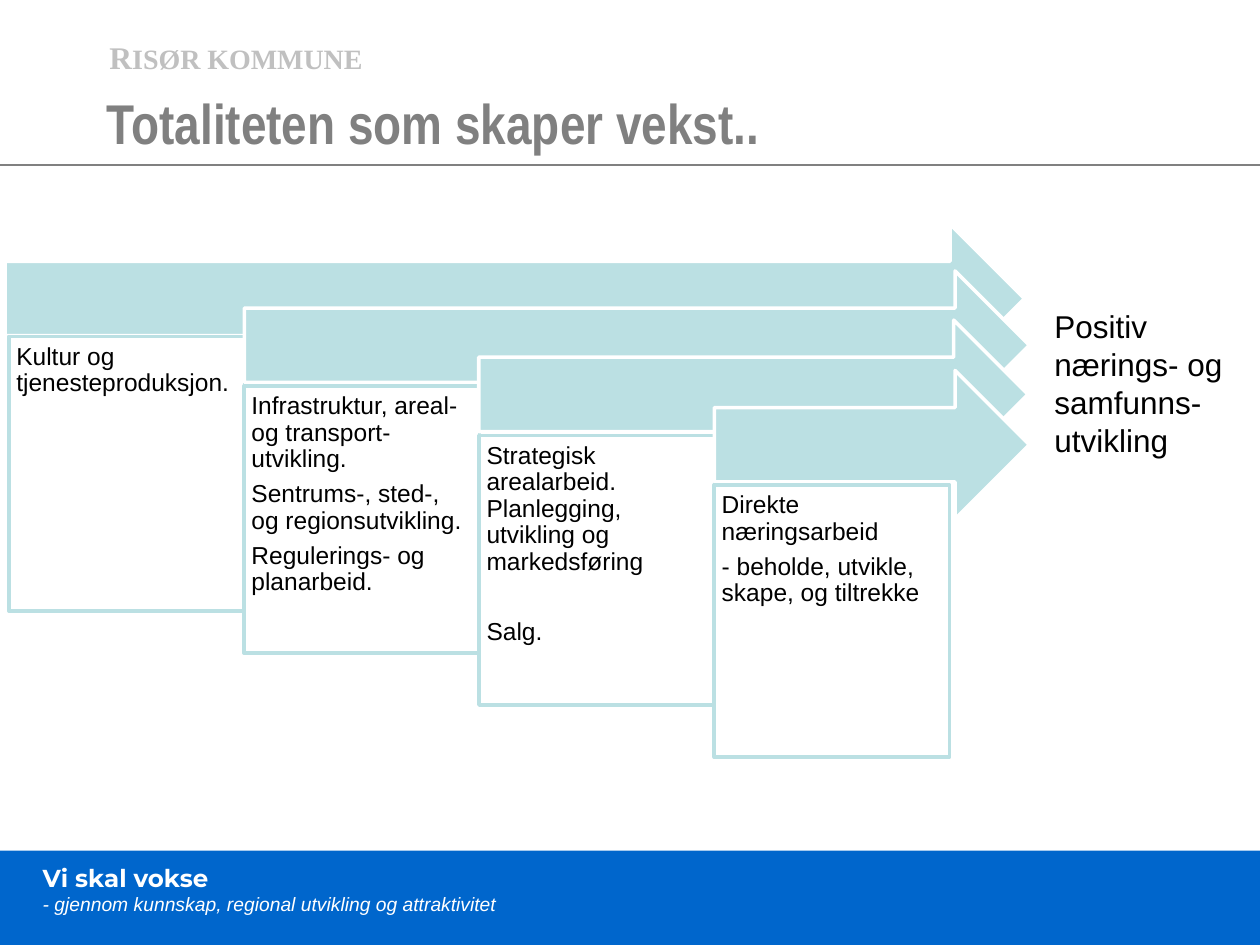
from lxml.etree import SubElement
from pptx import Presentation
from pptx.dml.color import RGBColor
from pptx.enum.shapes import MSO_CONNECTOR, MSO_SHAPE
from pptx.enum.text import MSO_ANCHOR, PP_ALIGN
from pptx.oxml.ns import qn
from pptx.util import Inches, Pt

THEME = {
    "colours": {"band": "0066CC", "teal": "BBE0E3", "white": "FFFFFF",
                "black": "000000", "grey": "808080", "silver": "C0C0C0"},
    "styles": {
        "initial": {"size": 18, "name": "Times New Roman", "bold": True, "colour": "silver"},
        "owner": {"size": 16, "name": "Times New Roman", "bold": True, "colour": "silver"},
        "title": {"size": 32, "name": "Arial Narrow", "bold": True, "colour": "grey"},
        "slogan": {"size": 14, "name": "Montserrat", "bold": True, "colour": "white"},
        "tagline": {"size": 11, "name": "Arial", "italic": True, "colour": "white"},
        "step": {"size": 14, "name": "Arial", "colour": "black"},
        "result": {"size": 18, "name": "Arial", "colour": "black"},
    },
}

# Content: a text is a list of paragraphs, a paragraph a list of (words, style)
OWNER = [[("R", "initial"), ("ISØR KOMMUNE", "owner")]]
TITLE = [[("Totaliteten som skaper vekst..", "title")]]
FOOTER = [[("Vi skal vokse", "slogan")],
          [("- gjennom kunnskap, regional utvikling og attraktivitet", "tagline")]]
RESULT = [[("Positiv nærings- og samfunns-utvikling", "result")]]

# Steps: arrow left, top and right; box height; paragraphs
STEPS = [
    (0.04, 1.78, 8.13, 2.18, ["Kultur og tjenesteproduksjon."]),
    (1.94, 2.15, 8.17, 2.12, ["Infrastruktur, areal- og transport-utvikling.",
                              "Sentrums-, sted-, og regionsutvikling.",
                              "Regulerings- og planarbeid."]),
    (3.8, 2.54, 8.16, 2.14, ["Strategisk arealarbeid. Planlegging, utvikling og markedsføring",
                             "Salg."]),
    (5.67, 2.94, 8.17, 2.16, ["Direkte næringsarbeid",
                              "- beholde, utvikle, skape, og tiltrekke"]),
]
ARROW_HEIGHT = 1.18
BOX_LEFT, BOX_TOP, BOX_WIDTH = 0.07, 2.67, 1.87
STEP_ACROSS, STEP_DOWN = 1.866, 0.393
STEP_FORMAT = {"line_spacing": 0.9, "space_after": Pt(4.9)}


def colour(name):
    return RGBColor.from_string(THEME["colours"][name])


def write(frame, paragraphs, paragraph_format=None):
    for index, spans in enumerate(paragraphs):
        para = frame.paragraphs[0] if index == 0 else frame.add_paragraph()
        para.alignment = PP_ALIGN.LEFT
        for key, value in (paragraph_format or {}).items():
            setattr(para, key, value)
        for words, style in spans:
            span = para.add_run()
            span.text = words
            for key, value in THEME["styles"][style].items():
                if key == "colour":
                    span.font.color.rgb = colour(value)
                else:
                    setattr(span.font, key, Pt(value) if key == "size" else value)


def add_text(page, place, paragraphs, wrap=True, anchor=MSO_ANCHOR.TOP):
    frame = page.shapes.add_textbox(*map(Inches, place)).text_frame
    frame.word_wrap = wrap
    frame.vertical_anchor = anchor
    write(frame, paragraphs)


def add_block(page, kind, place, fill, line=None):
    block = page.shapes.add_shape(kind, *map(Inches, place))
    block.shadow.inherit = False
    block.fill.solid()
    block.fill.fore_color.rgb = colour(fill)
    if line:
        block.line.color.rgb = colour(line)
        block.line.width = Pt(2)
    else:
        block.line.fill.background()
    return block


def add_step(page, index, step):
    left, top, right, box_height, texts = step
    add_block(page, MSO_SHAPE.RIGHT_ARROW, (left, top, right - left, ARROW_HEIGHT),
              "teal", "white")
    place = (BOX_LEFT + index * STEP_ACROSS, BOX_TOP + index * STEP_DOWN,
             BOX_WIDTH, box_height)
    frame = add_block(page, MSO_SHAPE.RECTANGLE, place, "white", "teal").text_frame
    frame.word_wrap = True
    frame.vertical_anchor = MSO_ANCHOR.TOP
    for side in ("left", "top", "right", "bottom"):
        setattr(frame, f"margin_{side}", Inches(0.06))
    write(frame, [[(text, "step")] for text in texts], STEP_FORMAT)
    return frame


def main():
    deck = Presentation()
    deck.slide_width, deck.slide_height = Inches(10), Inches(7.5)
    page = deck.slides.add_slide(deck.slide_layouts[6])

    # Footer band and header
    add_block(page, MSO_SHAPE.RECTANGLE, (0, 6.75, 10, 0.75), "band")
    add_text(page, (0.77, 0.25, 2.22, 0.4), OWNER, wrap=False)
    add_text(page, (0.24, 6.8, 3.83, 0.52), FOOTER, wrap=False)
    rule = page.shapes.add_connector(MSO_CONNECTOR.STRAIGHT, Inches(0), Inches(1.31),
                                     Inches(10), Inches(1.31))
    rule.line.color.rgb = colour("grey")
    rule.line.width = Pt(1)
    SubElement(rule.line._get_or_add_ln().getparent(), qn("a:effectLst"))
    add_text(page, (0.75, 0.52, 9.84, 0.89), TITLE, anchor=MSO_ANCHOR.MIDDLE)

    # Staggered arrows, each with its box
    frames = [add_step(page, index, step) for index, step in enumerate(STEPS)]
    # Sales stands apart from the planning work above it
    frames[2].paragraphs[1].space_before = Pt(20)

    # What the arrows lead to
    add_text(page, (8.27, 2.39, 1.59, 1.31), RESULT)
    deck.save("out.pptx")


if __name__ == "__main__":
    main()
